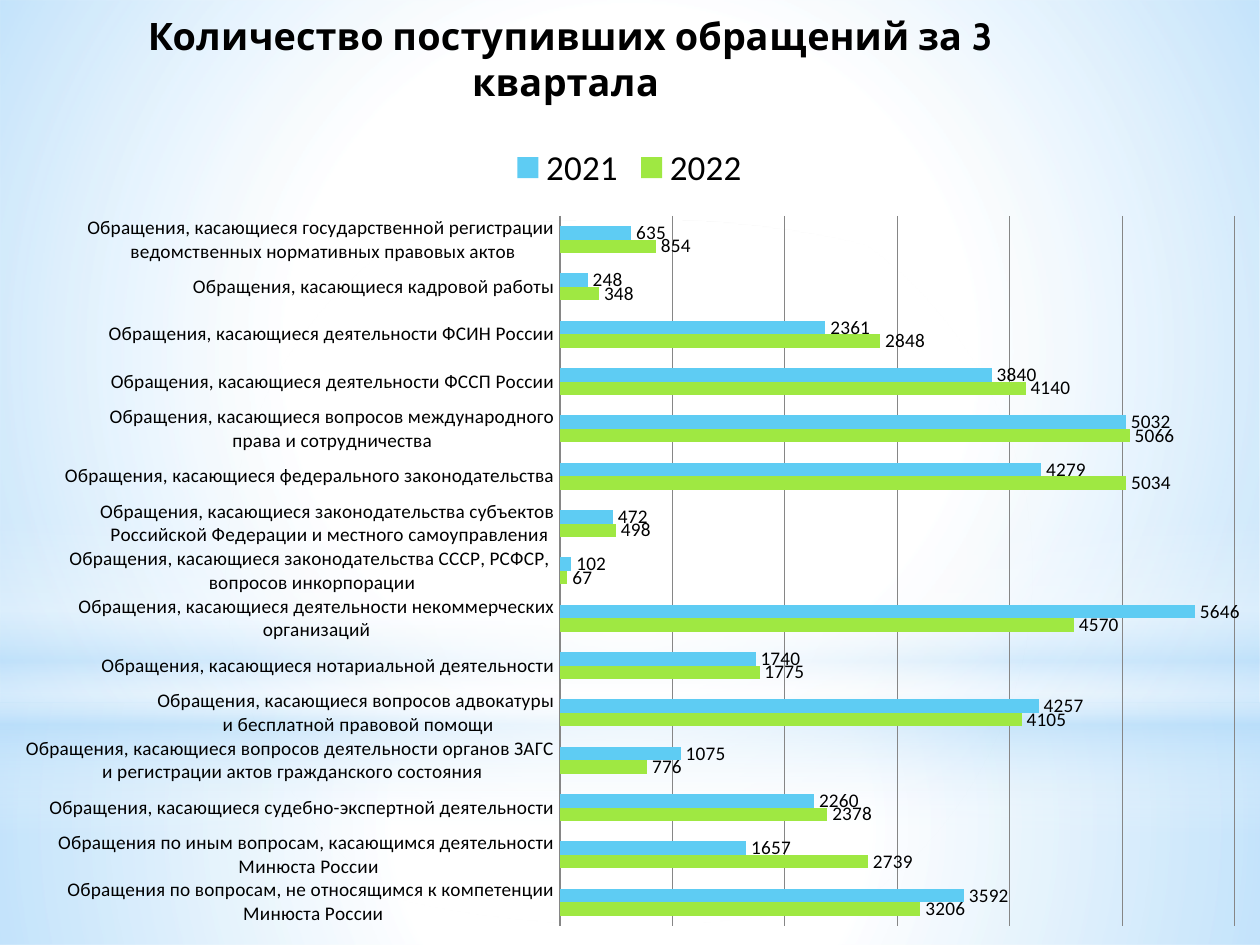
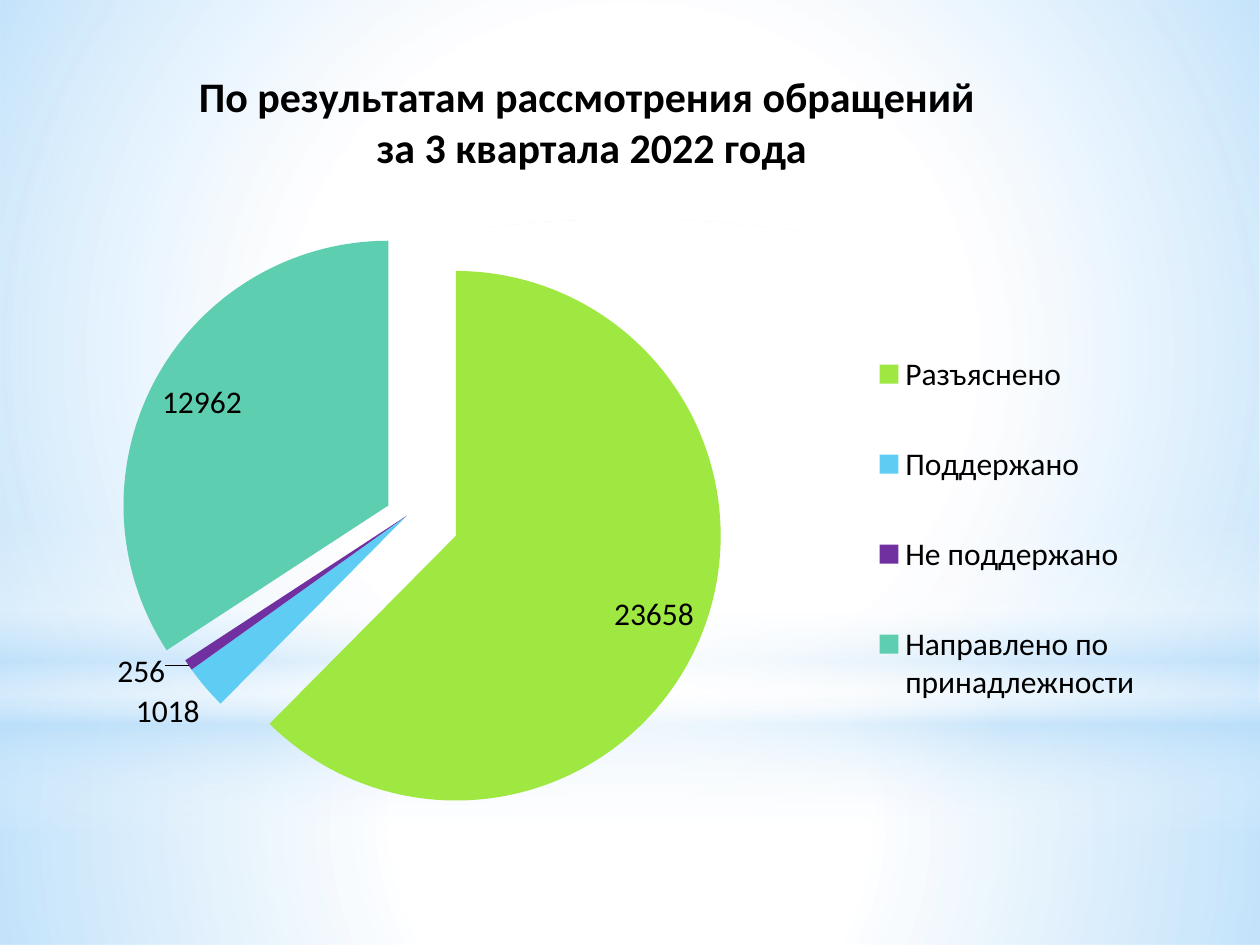
from dataclasses import dataclass

from pptx import Presentation
from pptx.chart.data import CategoryChartData
from pptx.dml.color import RGBColor
from pptx.enum.chart import (XL_CHART_TYPE, XL_LABEL_POSITION,
                             XL_LEGEND_POSITION, XL_TICK_MARK)
from pptx.enum.shapes import MSO_SHAPE
from pptx.oxml import parse_xml
from pptx.oxml.ns import nsdecls, qn
from pptx.util import Emu, Pt

WIDE, HIGH = 1260, 945


@dataclass(frozen=True)
class Theme:
    # Colours
    ink: str = "000000"
    grid: str = "868686"
    white: str = "FFFFFF"
    sky: str = "B4DCFA"
    lime: str = "9FE842"
    blue: str = "5ECCF3"
    plum: str = "7030A0"
    mint: str = "5DCEAF"
    # Fonts and sizes
    head: str = "Cabin"
    body: str = "Calibri"
    small: float = 11
    base: float = 18
    key: float = 20
    title: float = 21.6
    large: float = 24


THEME = Theme()

# Topic, 2022, 2021; listed from the bottom bar up
TOPICS = [
    ("Обращения по вопросам, не относящимся к компетенции\n Минюста России", 3206, 3592),
    ("Обращения по иным вопросам, касающимся деятельности\n Минюста России", 2739, 1657),
    ("Обращения, касающиеся судебно-экспертной деятельности", 2378, 2260),
    ("Обращения, касающиеся вопросов деятельности органов ЗАГС\n"
     " и регистрации актов гражданского состояния", 776, 1075),
    ("Обращения, касающиеся вопросов адвокатуры\n и бесплатной правовой помощи", 4105, 4257),
    ("Обращения, касающиеся нотариальной деятельности", 1775, 1740),
    ("Обращения, касающиеся деятельности некоммерческих организаций", 4570, 5646),
    ("Обращения, касающиеся законодательства СССР, РСФСР, \nвопросов инкорпорации", 67, 102),
    ("Обращения, касающиеся законодательства субъектов\n"
     " Российской Федерации и местного самоуправления", 498, 472),
    ("Обращения, касающиеся федерального законодательства", 5034, 4279),
    ("Обращения, касающиеся вопросов международного\nправа и сотрудничества", 5066, 5032),
    ("Обращения, касающиеся деятельности ФССП России", 4140, 3840),
    ("Обращения, касающиеся деятельности ФСИН России", 2848, 2361),
    ("Обращения, касающиеся кадровой работы", 348, 248),
    ("Обращения, касающиеся государственной регистрации\n"
     " ведомственных нормативных правовых актов", 854, 635),
]

# Result, count, colour, label place, distance from the centre in percent
INSIDE, OUTSIDE = XL_LABEL_POSITION.INSIDE_END, XL_LABEL_POSITION.OUTSIDE_END
RESULTS = [
    ("Разъяснено", 23658, THEME.lime, INSIDE, 20),
    ("Поддержано", 1018, THEME.blue, OUTSIDE, 0),
    ("Не поддержано", 256, THEME.plum, OUTSIDE, 0),
    ("Направлено по принадлежности", 12962, THEME.mint, INSIDE, 8),
]


def px(count):
    return Emu(round(count * 914400 / 126))


def paint(fill, tone):
    fill.solid()
    fill.fore_color.rgb = RGBColor.from_string(tone)


def style(font, size, name=THEME.body, bold=False):
    font.size, font.name, font.bold = Pt(size), name, bold
    font.color.rgb = RGBColor.from_string(THEME.ink)


# Backdrop
def glow(slide, kind, box, stops, angle=None):
    """Add a shape with a gradient of (place, colour, opacity) stops."""
    shape = slide.shapes.add_shape(kind, *map(px, box))
    shape.shadow.inherit = False
    shape.line.fill.background()
    marks = "".join(
        f'<a:gs pos="{at * 1000}"><a:srgbClr val="{tone}">'
        f'<a:alpha val="{alpha * 1000}"/></a:srgbClr></a:gs>'
        for at, tone, alpha in stops)
    if angle is None:
        shade = ('<a:path path="circle"><a:fillToRect l="50000" t="50000" '
                 'r="50000" b="50000"/></a:path>')
    else:
        shade = f'<a:lin ang="{angle * 60000}" scaled="0"/>'
    frame = shape._element.spPr.find(qn("a:prstGeom"))
    frame.addnext(parse_xml(f'<a:gradFill {nsdecls("a")} rotWithShape="1">'
                            f'<a:gsLst>{marks}</a:gsLst>{shade}</a:gradFill>'))
    return shape


def backdrop(slide, layout):
    """Draw the glows and hand them to the layout that all slides share."""
    white, sky = THEME.white, THEME.sky
    rect = MSO_SHAPE.RECTANGLE
    glows = [
        glow(slide, rect, (0, 703, WIDE, 242),
             [(0, white, 91), (37, white, 76), (100, sky, 79)]),
        glow(slide, rect, (0, 0, WIDE, 703),
             [(0, white, 89), (48, white, 62), (100, sky, 79)]),
        glow(slide, rect, (0, 519, WIDE, 315),
             [(0, white, 0), (29, white, 30), (45, sky, 40),
              (55, white, 26), (65, sky, 60), (100, white, 0)], 90),
        glow(slide, MSO_SHAPE.OVAL, (0, 220, WIDE, 703),
             [(0, white, 100), (56, white, 0)]),
    ]
    tree = layout.shapes._spTree
    for spot, shape in enumerate(glows, 2):
        tree.insert(spot, shape._element)


# Chart parts
def place(node, spot, left, top, size=None, inner=False, shift=False):
    """Give a chart part a manual layout, in px of the slide."""
    for old in node.findall(qn("c:layout")):
        node.remove(old)
    rows = [] if shift else [("xMode", "edge"), ("yMode", "edge")]
    if inner:
        rows.insert(0, ("layoutTarget", "inner"))
    rows += [("x", round(left / WIDE, 4)), ("y", round(top / HIGH, 4))]
    if size:
        rows += [("w", round(size[0] / WIDE, 4)), ("h", round(size[1] / HIGH, 4))]
    body = "".join(f'<c:{tag} val="{val}"/>' for tag, val in rows)
    node.insert(spot, parse_xml(f'<c:layout {nsdecls("c")}><c:manualLayout>{body}'
                                '</c:manualLayout></c:layout>'))


def explode(before, share):
    """Set how far pie slices stand off, ahead of the given node."""
    before.addprevious(parse_xml(f'<c:explosion {nsdecls("c")} val="{share}"/>'))


def add_chart(slide, kind, box, data, plot):
    chart = slide.shapes.add_chart(kind, *map(px, box), data).chart
    style(chart.font, THEME.base, THEME.head)
    place(chart._chartSpace.xpath("c:chart/c:plotArea")[0], 0,
          *plot[:2], plot[2:], inner=True)
    return chart


def add_title(chart, text, size, name, left, top):
    chart.has_title = True
    title = chart.chart_title
    title.text_frame.text = text
    for line in title.text_frame.paragraphs:
        style(line.font, size, name, True)
    place(title._element, 1, left, top)


def add_legend(chart, side, font_size, left, top, size=None):
    chart.has_legend = True
    legend = chart.legend
    legend.position = side
    legend.include_in_layout = False
    style(legend.font, font_size)
    place(legend._element, 1, left, top, size)


def add_labels(series, size, spot=None):
    labels = series.data_labels
    labels.show_value = True
    style(labels.font, size)
    if spot is not None:
        labels.position = spot


# Slides
def bar_slide(slide):
    names, now, past = zip(*TOPICS)
    data = CategoryChartData()
    data.categories = names
    data.add_series("2022", now)
    data.add_series("2021", past)
    chart = add_chart(slide, XL_CHART_TYPE.BAR_CLUSTERED, (0, 0, WIDE, HIGH),
                      data, (560, 216, 675, 710))
    add_title(chart, "Количество поступивших обращений за 3 квартала ",
              THEME.title, THEME.head, 141, 2)
    add_legend(chart, XL_LEGEND_POSITION.TOP, THEME.key, 506, 139)

    plot = chart.plots[0]
    plot.gap_width, plot.overlap, plot.vary_by_categories = 150, 0, False
    for series, tone in zip(plot.series, (THEME.lime, THEME.blue)):
        paint(series.format.fill, tone)
        add_labels(series, THEME.small, OUTSIDE)

    topic, scale = chart.category_axis, chart.value_axis
    topic.major_tick_mark = topic.minor_tick_mark = XL_TICK_MARK.NONE
    style(topic.tick_labels.font, THEME.small)
    scale.visible = False
    scale.minimum_scale, scale.maximum_scale, scale.major_unit = 0, 6000, 1000
    scale.has_major_gridlines = True
    for line in (topic.format.line, scale.major_gridlines.format.line):
        paint(line.fill, THEME.grid)
        line.width = Pt(0.75)


def pie_slide(slide):
    data = CategoryChartData()
    data.categories = [row[0] for row in RESULTS]
    data.add_series("Обращения", [row[1] for row in RESULTS])
    chart = add_chart(slide, XL_CHART_TYPE.PIE, (0, 6, WIDE, 939),
                      data, (76, 179, 662, 668))
    add_title(chart, "По результатам рассмотрения обращений \nза 3 квартала 2022 года",
              THEME.large, THEME.body, 195, 61)
    add_legend(chart, XL_LEGEND_POSITION.RIGHT, THEME.base, 862, 299, (290, 453))

    series = chart.plots[0].series[0]
    explode(series._element.find(qn("c:cat")), 25)
    add_labels(series, THEME.base)
    for index, (_, count, tone, spot, share) in enumerate(RESULTS):
        point = series.points[index]
        paint(point.format.fill, tone)
        style(point.data_label.font, THEME.base)
        point.data_label.position = spot
        explode(series._element.xpath("c:dPt/c:spPr")[index], share)
    # The thin slice has its label pulled aside
    thin = series._element.xpath('c:dLbls/c:dLbl[c:idx/@val="2"]')[0]
    place(thin, 1, -17, -17, shift=True)


def main():
    deck = Presentation()
    deck.slide_width, deck.slide_height = px(WIDE), px(HIGH)
    blank = deck.slide_layouts[6]
    first, second = (deck.slides.add_slide(blank) for _ in range(2))
    backdrop(first, blank)
    bar_slide(first)
    pie_slide(second)
    deck.save("out.pptx")


if __name__ == "__main__":
    main()
